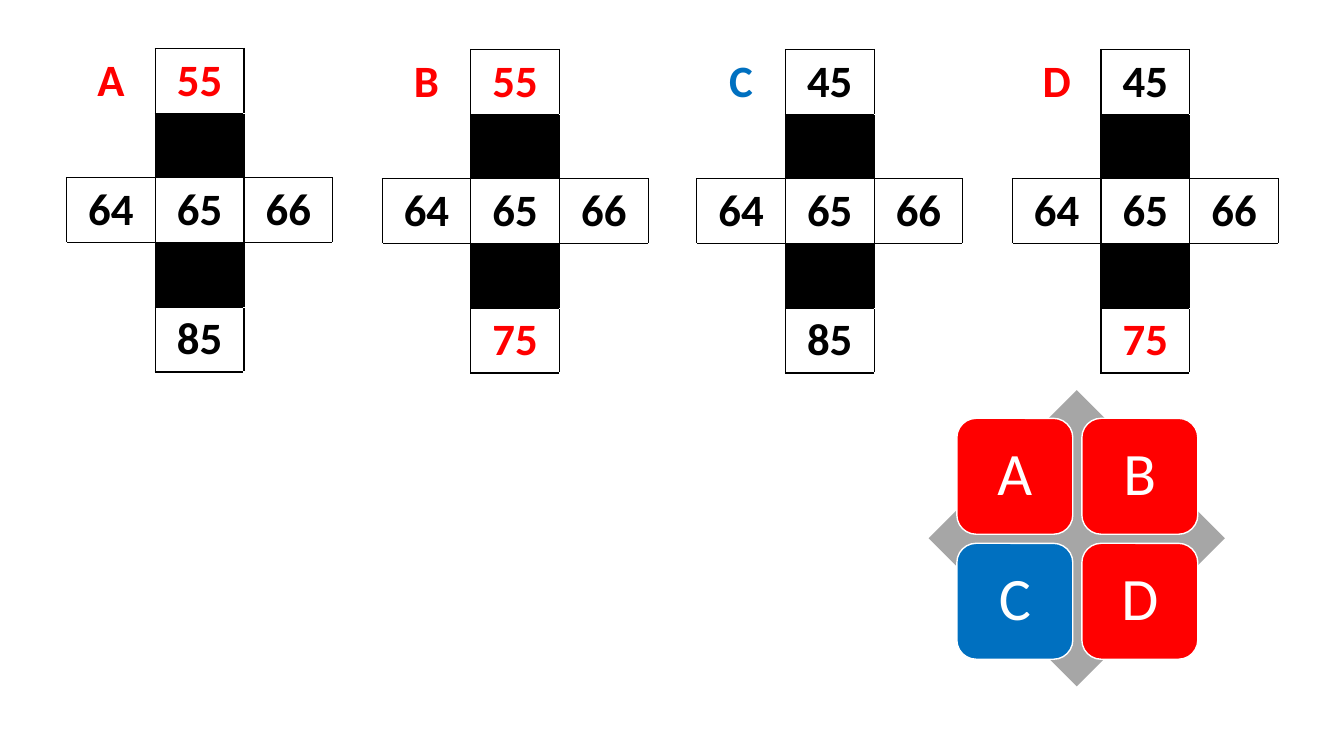
from lxml import etree
from pptx import Presentation
from pptx.dml.color import RGBColor
from pptx.enum.shapes import MSO_SHAPE
from pptx.enum.text import MSO_ANCHOR, PP_ALIGN
from pptx.oxml.ns import qn
from pptx.util import Inches, Pt

CENTER = PP_ALIGN.CENTER
MIDDLE = MSO_ANCHOR.MIDDLE
DIAMOND = MSO_SHAPE.DIAMOND
ROUNDED = MSO_SHAPE.ROUNDED_RECTANGLE

COLORS = {"red": "FF0000", "blue": "0070C0", "black": "000000", "white": "FFFFFF", "gray": "A6A6A6"}
FONT = "Calibri"

CROSSES = [
    {"label": "A", "color": "red", "top": ("55", "red"), "bottom": ("85", "black"), "at": (0.66, 0.48)},
    {"label": "B", "color": "red", "top": ("55", "red"), "bottom": ("75", "red"), "at": (3.79, 0.49)},
    {"label": "C", "color": "blue", "top": ("45", "black"), "bottom": ("85", "black"), "at": (6.91, 0.49)},
    {"label": "D", "color": "red", "top": ("45", "black"), "bottom": ("75", "red"), "at": (10.04, 0.49)},
]
MIDDLE_ROW = ("64", "65", "66")
ROWS, COLUMNS = 5, 3
COLUMN_WIDTH, ROW_HEIGHT = 0.88, 0.64
BLACK_CELLS = {(1, 1), (3, 1)}
NEIGHBORS = {"lnL": (0, -1), "lnR": (0, 1), "lnT": (-1, 0), "lnB": (1, 0)}

DIAMOND_BOX = (9.21, 3.87, 2.94, 2.94)
TILE_LEFT, TILE_TOP, TILE_SIZE, TILE_STEP = 9.49, 4.15, 1.15, 1.24
TILE_MARGIN = 0.18


def rgb(name):
    return RGBColor.from_string(COLORS[name])


def write(paragraph, text, size, color, bold):
    paragraph.text = text
    paragraph.alignment = CENTER
    font = paragraph.font
    font.name, font.size, font.bold = FONT, Pt(size), bold
    font.color.rgb = rgb(color)


def in_cross(row, column):
    return (column == 1 and 0 <= row < ROWS) or (row == 2 and 0 <= column < COLUMNS)


def add_borders(cell, row, column):
    properties = cell._tc.get_or_add_tcPr()
    for edge, (down, right) in NEIGHBORS.items():
        outlined = in_cross(row, column) or in_cross(row + down, column + right)
        line = etree.SubElement(properties, qn(f"a:{edge}"), w=str(Pt(1)))
        fill = etree.SubElement(line, qn("a:solidFill"))
        etree.SubElement(fill, qn("a:srgbClr"), val=COLORS["black" if outlined else "white"])


def add_cross(slide, cross):
    left, top = cross["at"]
    table = slide.shapes.add_table(
        ROWS, COLUMNS, Inches(left), Inches(top),
        Inches(COLUMNS * COLUMN_WIDTH), Inches(ROWS * ROW_HEIGHT),
    ).table
    table.first_row = table.horz_banding = False
    for column in table.columns:
        column.width = Inches(COLUMN_WIDTH)
    contents = {(0, 0): (cross["label"], cross["color"]), (0, 1): cross["top"], (4, 1): cross["bottom"]}
    for column, number in enumerate(MIDDLE_ROW):
        contents[2, column] = (number, "black")
    for row in range(ROWS):
        table.rows[row].height = Inches(ROW_HEIGHT)
        for column in range(COLUMNS):
            cell = table.cell(row, column)
            add_borders(cell, row, column)
            if (row, column) in BLACK_CELLS:
                cell.fill.solid()
                cell.fill.fore_color.rgb = rgb("black")
            else:
                cell.fill.background()
            if (row, column) in contents:
                text, color = contents[row, column]
                write(cell.text_frame.paragraphs[0], text, 32, color, True)


def add_filled(slide, kind, box, color):
    shape = slide.shapes.add_shape(kind, *map(Inches, box))
    shape.shadow.inherit = False
    shape.fill.solid()
    shape.fill.fore_color.rgb = rgb(color)
    return shape


def add_tile(slide, index, cross):
    row, column = divmod(index, 2)
    box = (TILE_LEFT + column * TILE_STEP, TILE_TOP + row * TILE_STEP, TILE_SIZE, TILE_SIZE)
    tile = add_filled(slide, ROUNDED, box, cross["color"])
    tile.line.color.rgb = rgb("white")
    tile.line.width = Pt(1)
    frame = tile.text_frame
    frame.vertical_anchor = MIDDLE
    frame.margin_left = frame.margin_right = Inches(TILE_MARGIN)
    frame.margin_top = frame.margin_bottom = Inches(TILE_MARGIN)
    paragraph = frame.paragraphs[0]
    write(paragraph, cross["label"], 43, "white", False)
    paragraph.line_spacing = 0.9


def main():
    presentation = Presentation()
    presentation.slide_width, presentation.slide_height = Inches(13.33), Inches(7.5)
    slide = presentation.slides.add_slide(presentation.slide_layouts[6])
    diamond = add_filled(slide, DIAMOND, DIAMOND_BOX, "gray")
    diamond.line.fill.background()
    for index, cross in enumerate(CROSSES):
        add_tile(slide, index, cross)
    for cross in CROSSES:
        add_cross(slide, cross)
    presentation.save("out.pptx")


if __name__ == "__main__":
    main()
